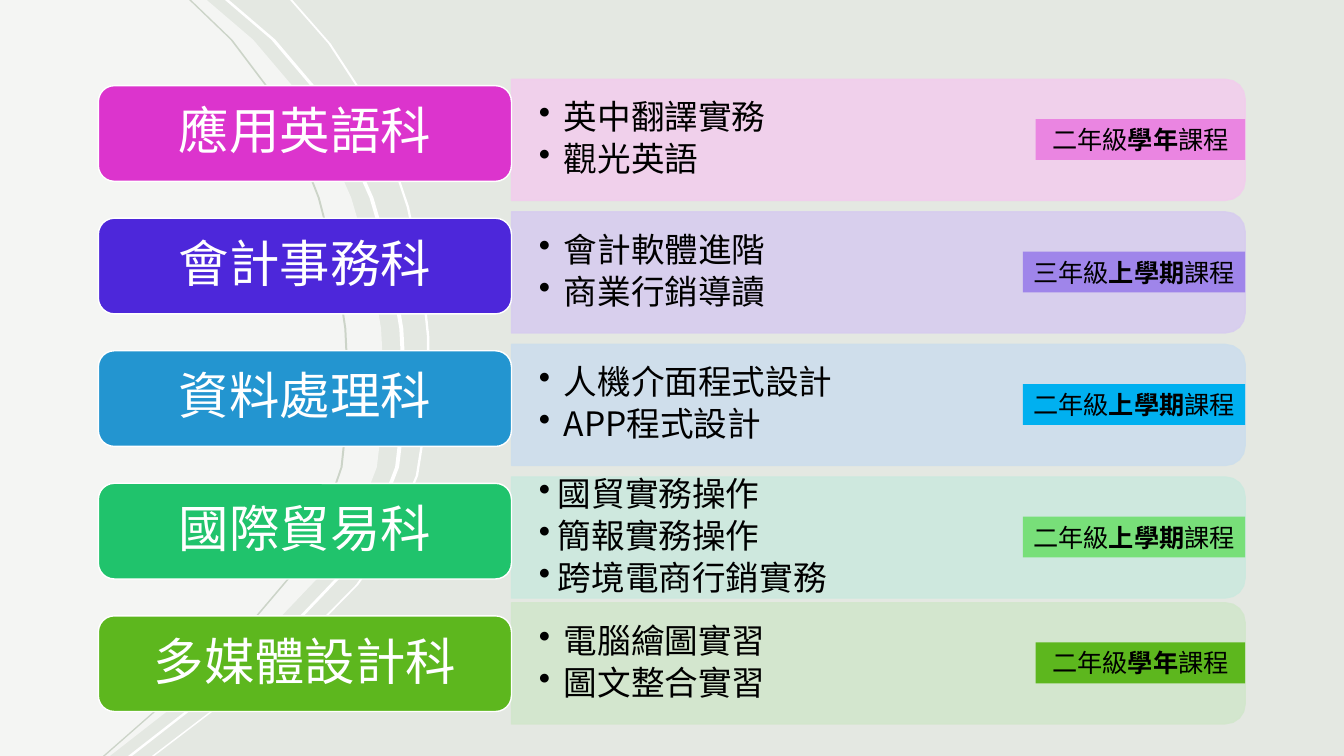
import pptx
import pptx.util
import pptx.dml.color
import pptx.enum.shapes
import pptx.enum.text
import pptx.oxml.ns
import lxml.etree

Cm = pptx.util.Cm
Pt = pptx.util.Pt
RGBColor = pptx.dml.color.RGBColor
Shape = pptx.enum.shapes.MSO_SHAPE
Align = pptx.enum.text.PP_ALIGN
Anchor = pptx.enum.text.MSO_ANCHOR
qn = pptx.oxml.ns.qn

FONT = "Noto Sans CJK SC"
WHITE = RGBColor(0xFF, 0xFF, 0xFF)
BLACK = RGBColor(0, 0, 0)
SAGE = RGBColor(0xE4, 0xE8, 0xE2)
MOSS = RGBColor(0xCC, 0xD4, 0xC8)
PINK = RGBColor(0xDC, 0x34, 0xCD)
PINK_PALE = RGBColor(0xF2, 0xCE, 0xED)
PINK_MID = RGBColor(0xEA, 0x85, 0xE1)
VIOLET = RGBColor(0x4D, 0x27, 0xDA)
VIOLET_PALE = RGBColor(0xD7, 0xCD, 0xEF)
VIOLET_MID = RGBColor(0x9F, 0x85, 0xEA)
BLUE = RGBColor(0x23, 0x95, 0xD0)
BLUE_PALE = RGBColor(0xCD, 0xDE, 0xEC)
BLUE_MID = RGBColor(0x00, 0xB0, 0xF0)
GREEN = RGBColor(0x20, 0xC3, 0x6C)
GREEN_PALE = RGBColor(0xCC, 0xE9, 0xDE)
GREEN_MID = RGBColor(0x78, 0xDF, 0x79)
LEAF = RGBColor(0x5D, 0xB7, 0x1E)
LEAF_PALE = RGBColor(0xD2, 0xE6, 0xCC)

WIDTH, HEIGHT = 33.87, 19.05
SPLIT, RIGHT = 12.89, 31.38
STEP = 3.34

NEAR = [(5.21, 0), (8.13, 2.11), (9.7, 5.82), (9.7, 10.06),
        (9.7, 13.79), (7.14, 15.57), (4.5, 17.7),
        (4.04, 18.11), (3.56, 18.49), (2.77, 19.05)]
FAR = [(7.37, 0), (9.8, 2.39), (11.02, 6.1), (10.82, 10.21),
       (10.64, 14.1), (8.05, 15.82), (5.36, 17.93),
       (4.88, 18.31), (4.39, 18.67), (3.89, 19.05)]

ROWS = [
    ("應用英語科", ["英中翻譯實務", "觀光英語"], "二年級*學年*課程",
     PINK, PINK_PALE, PINK_MID, 2, 0.63, 5.28),
    ("會計事務科", ["會計軟體進階", "商業行銷導讀"], "三年級*上學期*課程",
     VIOLET, VIOLET_PALE, VIOLET_MID, 2 + STEP, 0.63, 5.6),
    ("資料處理科", ["人機介面程式設計", "APP程式設計"], "二年級*上學期*課程",
     BLUE, BLUE_PALE, BLUE_MID, 2 + 2 * STEP, 0.63, 5.6),
    ("國際貿易科", ["國貿實務操作", "簡報實務操作", "跨境電商行銷實務"],
     "二年級*上學期*課程", GREEN, GREEN_PALE, GREEN_MID, 2 + 3 * STEP, 0.48, 5.6),
    ("多媒體設計科", ["電腦繪圖實習", "圖文整合實習"], "二年級*學年*課程",
     LEAF, LEAF_PALE, LEAF, 15.19, 0.63, 5.28),
]


def trace(knots, counts=(7, 6, 1)):
    points = [knots[0]]
    for k, count in zip(range(0, len(knots) - 1, 3), counts):
        for n in range(1, count + 1):
            t = n / count
            parts = ((1 - t) ** 3, 3 * t * (1 - t) ** 2, 3 * t * t * (1 - t), t ** 3)
            points.append(tuple(sum(w * p[axis] for w, p in zip(parts, knots[k:k + 4]))
                                for axis in (0, 1)))
    return points


def paint(shape, fill, line=None, alpha=100):
    shape.shadow.inherit = False
    shape.fill.solid()
    shape.fill.fore_color.rgb = fill
    if line is None:
        shape.line.fill.background()
    else:
        shape.line.color.rgb = line
        shape.line.width = Pt(1)
    if alpha < 100:
        for color in list(shape._element.spPr.iter(qn("a:srgbClr"))):
            lxml.etree.SubElement(color, qn("a:alpha"), val=str(alpha * 1000))
    return shape


def outline(slide, points, fill, **style):
    points = [(Cm(x), Cm(y)) for x, y in points]
    form = slide.shapes.build_freeform(*points[0])
    form.add_line_segments(points[1:], close=True)
    return paint(form.convert_to_shape(), fill, **style)


def ring(slide, knots, fill, width, scale=1, shift=0):
    outer = [(x * scale + shift, y) for x, y in trace(knots)]
    inner = [(x - width, y) for x, y in reversed(outer)]
    outline(slide, outer + inner, fill)


def box(slide, kind, left, top, width, height, fill, line=None):
    shape = slide.shapes.add_shape(kind, Cm(left), Cm(top), Cm(width), Cm(height))
    return paint(shape, fill, line)


def write(shape, *lines, size, color=BLACK, align=Align.CENTER, pitch=1.0, after=0,
          hang=None, wrap=True, pads=(0.25, 0.13, 0.25, 0.13)):
    frame = shape.text_frame
    frame.word_wrap = wrap
    frame.vertical_anchor = Anchor.MIDDLE
    (frame.margin_left, frame.margin_top,
     frame.margin_right, frame.margin_bottom) = map(Cm, pads)
    for n, line in enumerate(lines):
        para = frame.paragraphs[0] if n == 0 else frame.add_paragraph()
        if hang:
            props = para._p.get_or_add_pPr()
            props.set("marL", str(Cm(hang)))
            props.set("indent", str(-Cm(hang)))
            lxml.etree.SubElement(props, qn("a:buChar"), char="•")
        para.alignment = align
        para.line_spacing = pitch
        para.space_after = Pt(after)
        for k, part in enumerate(line.split("*")):
            run = para.add_run()
            run.text = part
            run.font.size = Pt(size)
            run.font.bold = k % 2 == 1
            run.font.color.rgb = color
            run.font.name = FONT
            lxml.etree.SubElement(run._r.get_or_add_rPr(), qn("a:ea"), typeface=FONT)


def panel(slide, top, fill):
    low, curve, bend = top + 3.05, 0.5, 0.22
    upper = [(RIGHT - curve, top), (RIGHT - bend, top),
             (RIGHT, top + bend), (RIGHT, top + curve)]
    lower = [(RIGHT, low - curve), (RIGHT, low - bend),
             (RIGHT - bend, low), (RIGHT - curve, low)]
    points = [(SPLIT, top)] + trace(upper, [4]) + trace(lower, [4]) + [(SPLIT, low)]
    return outline(slide, points, fill, line=fill, alpha=90)


def course(slide, place, name, topics, term, deep, pale, mid, top, hang, wide):
    write(panel(slide, top, pale), *topics, size=24, align=Align.LEFT,
          pitch=0.9, after=4, hang=hang, pads=(0.69, 0.48, 0.84, 0.48))
    title = box(slide, Shape.ROUNDED_RECTANGLE, 2.48, 2.16 + place * STEP,
                SPLIT - 2.48, 2.41, deep, WHITE)
    write(title, name, size=36, color=WHITE, pitch=0.9, pads=(0.51, 0.3, 0.51, 0.3))
    tag = box(slide, Shape.RECTANGLE, RIGHT - wide, top + 1, wide, 1.03, mid)
    write(tag, term, size=18, wrap=False)


def main():
    deck = pptx.Presentation()
    deck.slide_width, deck.slide_height = Cm(WIDTH), Cm(HEIGHT)
    slide = deck.slides.add_slide(deck.slide_layouts[6])
    slide.background.fill.solid()
    slide.background.fill.fore_color.rgb = SAGE
    outline(slide, [(0, 0)] + trace(NEAR) + [(0, HEIGHT)], WHITE, alpha=60)
    ring(slide, FAR, WHITE, 0.06)
    ring(slide, NEAR, WHITE, 0.1, shift=0.56)
    ring(slide, NEAR, MOSS, 0.05, scale=0.89, shift=0.18)
    for place, row in enumerate(ROWS):
        course(slide, place, *row)
    deck.save("out.pptx")


if __name__ == "__main__":
    main()
